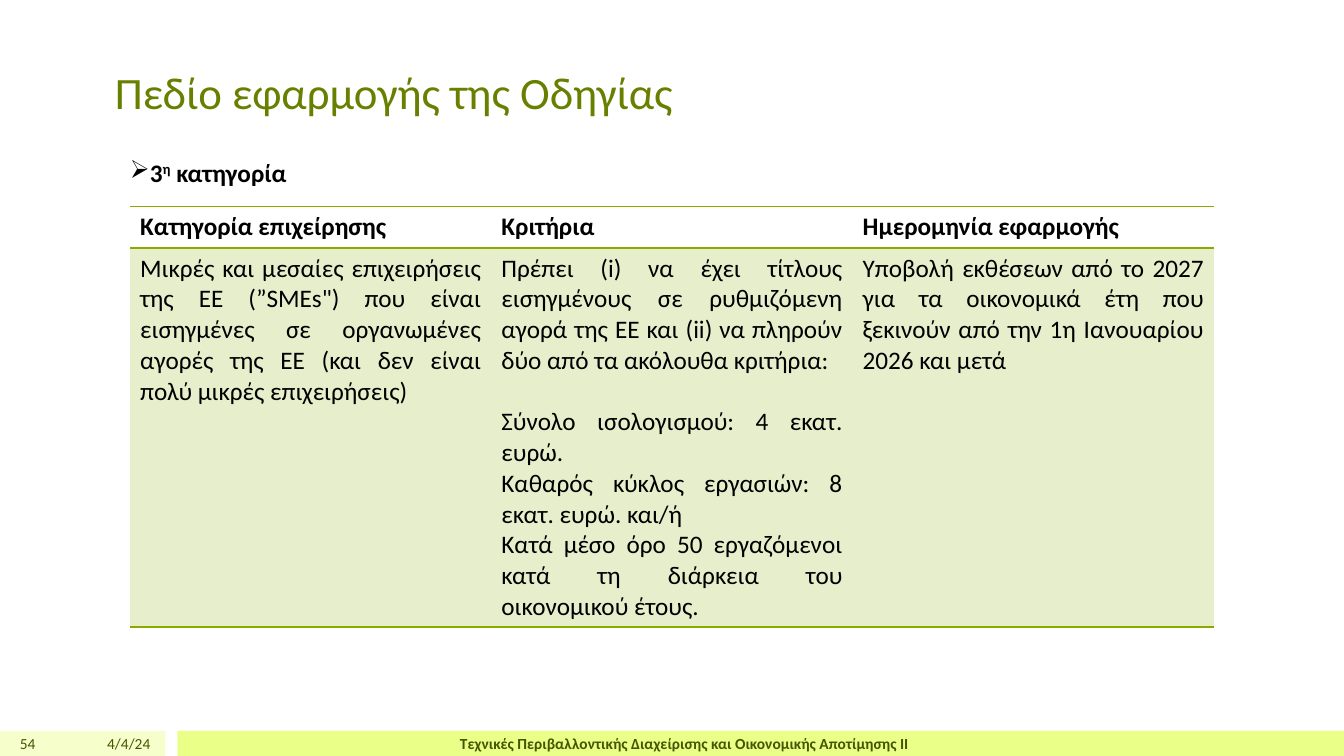
from dataclasses import dataclass

import pptx
import pptx.dml.color
import pptx.enum.shapes
import pptx.enum.text
import pptx.oxml
import pptx.oxml.ns
import pptx.util

Inches = pptx.util.Inches
Pt = pptx.util.Pt
Align = pptx.enum.text.PP_ALIGN
Anchor = pptx.enum.text.MSO_ANCHOR
NO_TABLE_STYLE = "{2D5ABB26-0587-4C30-8999-92F81FD0307C}"


@dataclass(frozen=True)
class Theme:
    font: str = "Calibri"
    title: str = "688000"
    body: str = "000000"
    footer: str = "455500"
    accent: str = "8BAA00"
    pale_band: str = "F6FFCC"
    bright_band: str = "E9FF88"
    title_size: int = 32
    body_size: int = 18
    footer_size: int = 11
    blank_line: int = 22
    row_opacity: int = 20


THEME = Theme()

HEADINGS = ["Κατηγορία επιχείρησης", "Κριτήρια", "Ημερομηνία εφαρμογής"]
COMPANIES = ["Μικρές και μεσαίες επιχειρήσεις της ΕΕ (”SMEs\") που είναι εισηγμένες "
             "σε οργανωμένες αγορές της ΕΕ (και δεν είναι πολύ μικρές επιχειρήσεις)"]
CRITERIA = [
    "Πρέπει (i) να έχει τίτλους εισηγμένους σε ρυθμιζόμενη αγορά της ΕΕ "
    "και (ii) να πληρούν δύο από τα ακόλουθα κριτήρια:",
    "Σύνολο ισολογισμού: 4 εκατ. ευρώ.",
    "Καθαρός κύκλος εργασιών: 8 εκατ. ευρώ. και/ή",
    "Κατά μέσο όρο 50 εργαζόμενοι κατά τη διάρκεια του οικονομικού έτους.",
]
START_DATE = ["Υποβολή εκθέσεων από το 2027 για τα οικονομικά έτη που ξεκινούν "
              "από την 1η Ιανουαρίου 2026 και μετά"]


def rgb(colour):
    return pptx.dml.color.RGBColor.from_string(colour)


def add_xml(parent, xml):
    """Append a drawing element, written without its namespace declaration."""
    tag, rest = xml.split(" ", 1)
    declared = f"{tag} {pptx.oxml.ns.nsdecls('a')} {rest}"
    element = pptx.oxml.parse_xml(declared)
    parent.append(element)


def write(paragraph, text, size=THEME.body_size, colour=THEME.body, bold=False,
          align=Align.JUSTIFY, baseline=None):
    """Append one formatted run to a paragraph."""
    paragraph.alignment = align
    run = paragraph.add_run()
    run.text = text
    run.font.name = THEME.font
    run.font.size = Pt(size)
    run.font.bold = bold
    run.font.color.rgb = rgb(colour)
    if baseline:
        run.font._element.set("baseline", str(baseline * 1000))


def add_band(slide, left, width, colour):
    band = slide.shapes.add_shape(pptx.enum.shapes.MSO_SHAPE.RECTANGLE, Inches(left),
                                  Inches(7.25), Inches(width), Inches(0.25))
    band.shadow.inherit = False
    band.fill.solid()
    band.fill.fore_color.rgb = rgb(colour)
    band.line.fill.background()


def add_text_frame(slide, left, top, width, height, anchor=Anchor.TOP):
    box = slide.shapes.add_textbox(Inches(left), Inches(top), Inches(width), Inches(height))
    box.text_frame.word_wrap = True
    box.text_frame.vertical_anchor = anchor
    return box.text_frame


def add_footer_text(slide, text, left, width, **text_format):
    frame = add_text_frame(slide, left, 7.25, width, 0.25, Anchor.MIDDLE)
    write(frame.paragraphs[0], text, size=THEME.footer_size, colour=THEME.footer,
          **text_format)


def set_title(slide, text):
    title = slide.shapes.title
    title.left, title.top = Inches(1.04), Inches(0.37)
    title.width, title.height = Inches(11.04), Inches(0.86)
    title.text_frame.vertical_anchor = Anchor.BOTTOM
    write(title.text_frame.paragraphs[0], text, size=THEME.title_size,
          colour=THEME.title, align=Align.LEFT)


def add_category(slide):
    category = add_text_frame(slide, 1.19, 1.51, 6.67, 0.4).paragraphs[0]
    add_xml(category._p.get_or_add_pPr(), '<a:buChar char="➢"/>')
    write(category, "3", bold=True)
    write(category, "η", bold=True, baseline=30)
    write(category, " κατηγορία", bold=True)


def add_borders(cell, sides):
    for side in sides:
        add_xml(cell._tc.get_or_add_tcPr(),
                f'<a:ln{side} w="{Pt(1)}"><a:solidFill><a:srgbClr val="{THEME.accent}"/>'
                f'</a:solidFill></a:ln{side}>')


def tint(cell):
    """Fill a cell with the translucent accent colour."""
    add_xml(cell._tc.get_or_add_tcPr(),
            f'<a:solidFill ><a:srgbClr val="{THEME.accent}">'
            f'<a:alpha val="{THEME.row_opacity * 1000}"/></a:srgbClr></a:solidFill>')


def add_scope_table(slide):
    table = slide.shapes.add_table(2, 3, Inches(1.29), Inches(2.05),
                                   Inches(10.75), Inches(4.17)).table
    table.first_row = table.horz_banding = False
    table._tbl.tblPr.find(pptx.oxml.ns.qn("a:tableStyleId")).text = NO_TABLE_STYLE
    table.rows[0].height, table.rows[1].height = Inches(0.41), Inches(3.76)

    for column, heading in enumerate(HEADINGS):
        cell = table.cell(0, column)
        write(cell.text_frame.paragraphs[0], heading, bold=True)
        add_borders(cell, "TB")
        cell.fill.background()

    for column, lines in enumerate([COMPANIES, CRITERIA, START_DATE]):
        cell = table.cell(1, column)
        frame = cell.text_frame
        for index, line in enumerate(lines):
            paragraph = frame.add_paragraph() if index else frame.paragraphs[0]
            if index == 1:
                paragraph.space_before = Pt(THEME.blank_line)
            write(paragraph, line)
        add_borders(cell, "TB")
        tint(cell)


def main():
    deck = pptx.Presentation()
    deck.slide_width, deck.slide_height = Inches(13.33), Inches(7.5)
    slide = deck.slides.add_slide(deck.slide_layouts[5])

    add_band(slide, 0, 1.64, THEME.pale_band)
    add_band(slide, 1.76, 11.57, THEME.bright_band)
    set_title(slide, "Πεδίο εφαρμογής της Οδηγίας")
    add_footer_text(slide, "54", 0, 0.45, align=Align.RIGHT)
    add_footer_text(slide, "4/4/24", 0.5, 1.09, align=Align.RIGHT)
    add_footer_text(slide, "Τεχνικές Περιβαλλοντικής Διαχείρισης και Οικονομικής Αποτίμησης ΙΙ",
                    1.79, 10, align=Align.CENTER, bold=True)
    add_scope_table(slide)
    add_category(slide)
    deck.save("out.pptx")


if __name__ == "__main__":
    main()
